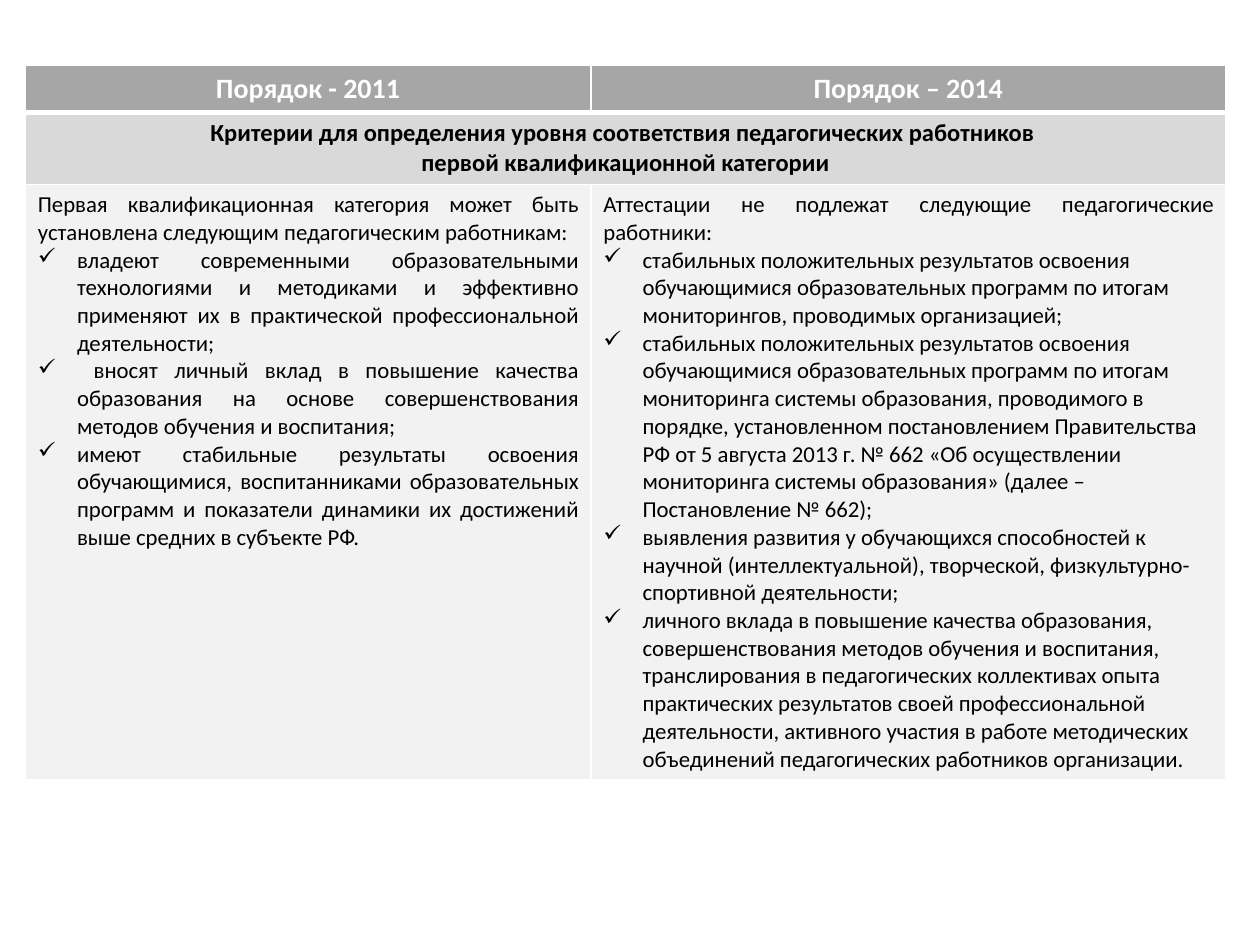
from lxml.etree import SubElement
from pptx import Presentation
from pptx.dml.color import RGBColor
from pptx.enum.text import PP_ALIGN
from pptx.oxml.ns import qn
from pptx.util import Cm, Pt

COLUMN_WIDTHS = (11.4, 12.8)
ROW_HEIGHTS = (0.94, 1.44, 11.79)
INDENT = Cm(0.79)

HEADER = {"size": Pt(16), "bold": True, "name": "Calibri"}
SUBHEAD = {"size": Pt(14), "bold": True, "name": "Calibri"}
BODY = {"size": Pt(13), "bold": False, "name": "Calibri"}

TITLES = ("Порядок - 2011", "Порядок – 2014")
CRITERIA = (
    "Критерии для определения уровня соответствия педагогических работников ",
    "первой квалификационной категории",
)
INTRO_2011 = "Первая квалификационная категория может быть установлена следующим педагогическим работникам:"
POINTS_2011 = (
    "владеют современными образовательными технологиями и методиками и эффективно применяют их в практической профессиональной деятельности;",
    " вносят личный вклад в повышение качества образования на основе совершенствования методов обучения и воспитания; ",
    "имеют стабильные результаты освоения обучающимися, воспитанниками образовательных программ и показатели динамики их достижений выше средних в субъекте РФ.",
)
INTRO_2014 = "Аттестации не подлежат следующие педагогические работники:"
POINTS_2014 = (
    "стабильных положительных результатов освоения обучающимися образовательных программ по итогам мониторингов, проводимых организацией;",
    "стабильных положительных результатов освоения обучающимися образовательных программ по итогам мониторинга системы образования, проводимого в порядке, установленном постановлением Правительства РФ от 5 августа 2013 г. № 662 «Об осуществлении мониторинга системы образования» (далее – Постановление № 662);",
    "выявления развития у обучающихся способностей к научной (интеллектуальной), творческой, физкультурно-спортивной деятельности;",
    "личного вклада в повышение качества образования, совершенствования методов обучения и воспитания, транслирования в педагогических коллективах опыта практических результатов своей профессиональной деятельности, активного участия в работе методических объединений педагогических работников организации.",
)


def color(value):
    return RGBColor.from_string(value)


def style_cell(cell, fill, bottom=1, top=1):
    """White borders first, then the fill, as the schema orders them."""
    properties = cell._tc.get_or_add_tcPr()
    for side, width in {"L": 1, "R": 1, "T": top, "B": bottom}.items():
        line = SubElement(properties, qn(f"a:ln{side}"), w=str(Pt(width)))
        solid = SubElement(line, qn("a:solidFill"))
        SubElement(solid, qn("a:srgbClr"), val="FFFFFF")
    cell.fill.solid()
    cell.fill.fore_color.rgb = color(fill)


def add_bullet(para):
    properties = para._p.get_or_add_pPr()
    properties.set("marL", str(INDENT))
    properties.set("indent", str(-INDENT))
    SubElement(properties, qn("a:buChar"), char="✓")


def write_cell(cell, lines, font_format, ink="000000"):
    """Each line is a tuple of text, alignment and whether it has a bullet."""
    frame = cell.text_frame
    for index, (text, alignment, bulleted) in enumerate(lines):
        para = frame.paragraphs[0] if index == 0 else frame.add_paragraph()
        para.alignment = alignment
        if bulleted:
            add_bullet(para)
        span = para.add_run()
        span.text = text
        for name, value in font_format.items():
            setattr(span.font, name, value)
        span.font.color.rgb = color(ink)


def centered(texts):
    return [(text, PP_ALIGN.CENTER, False) for text in texts]


def checklist(intro, points, alignment):
    return [(intro, PP_ALIGN.JUSTIFY, False)] + [(point, alignment, True) for point in points]


def add_comparison(page, left, top):
    frame = page.shapes.add_table(
        len(ROW_HEIGHTS), len(COLUMN_WIDTHS), Cm(left), Cm(top),
        Cm(sum(COLUMN_WIDTHS)), Cm(sum(ROW_HEIGHTS)))
    table = frame.table
    table.first_row = table.horz_banding = False
    for column, width in zip(table.columns, COLUMN_WIDTHS):
        column.width = Cm(width)
    for row, height in zip(table.rows, ROW_HEIGHTS):
        row.height = Cm(height)

    # Row fills and borders, with a thick rule under the header
    row_styles = (("A6A6A6", 3, 1), ("D9D9D9", 1, 3), ("F2F2F2", 1, 1))
    for row, (fill, bottom, top_rule) in zip(table.rows, row_styles):
        for cell in row.cells:
            style_cell(cell, fill, bottom, top_rule)

    # Header row
    for index, title in enumerate(TITLES):
        write_cell(table.cell(0, index), centered([title]), HEADER, "FFFFFF")

    # Criteria heading across both columns
    table.cell(1, 0).merge(table.cell(1, 1))
    write_cell(table.cell(1, 0), centered(CRITERIA), SUBHEAD)

    # Checklists
    write_cell(table.cell(2, 0), checklist(INTRO_2011, POINTS_2011, PP_ALIGN.JUSTIFY), BODY)
    write_cell(table.cell(2, 1), checklist(INTRO_2014, POINTS_2014, PP_ALIGN.LEFT), BODY)


def main():
    deck = Presentation()
    deck.slide_width, deck.slide_height = Cm(25.4), Cm(19.05)
    page = deck.slides.add_slide(deck.slide_layouts[6])
    add_comparison(page, 0.51, 1.32)
    deck.save("out.pptx")


if __name__ == "__main__":
    main()
